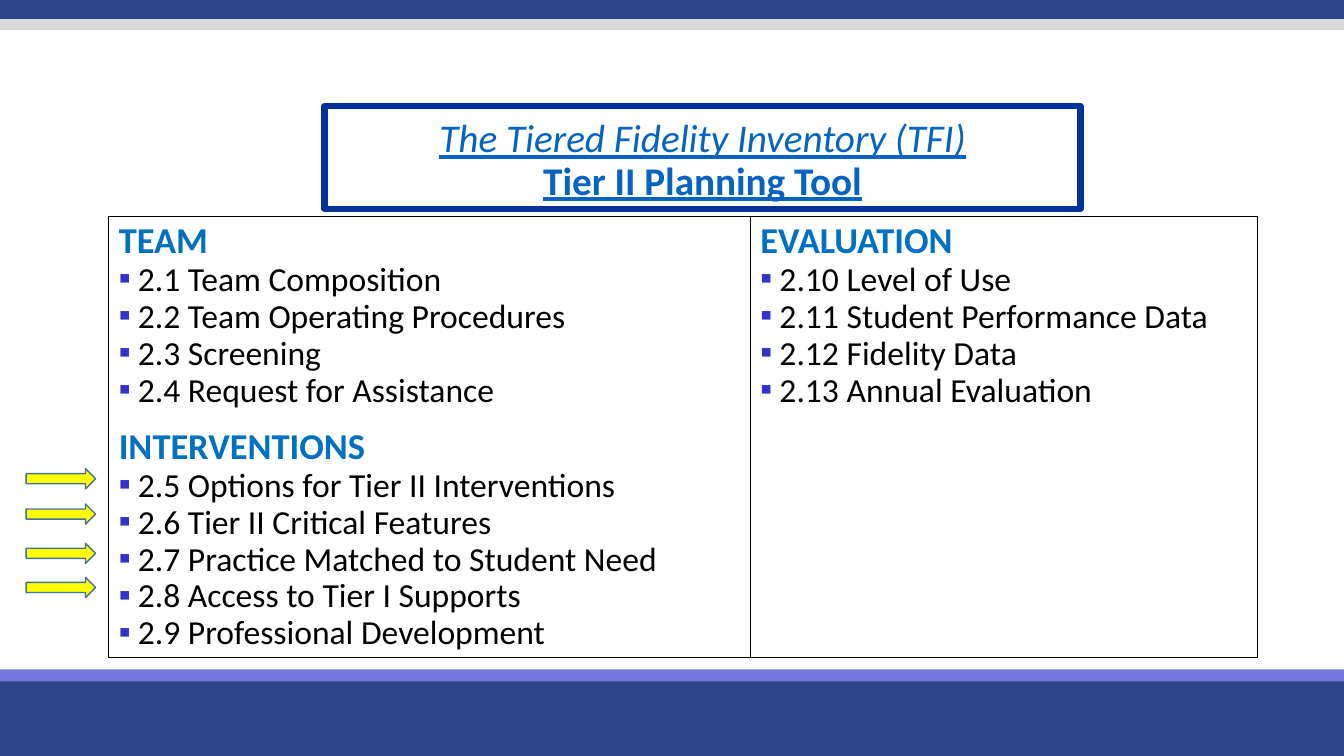
from dataclasses import dataclass

from lxml.etree import SubElement
from pptx import Presentation
from pptx.dml.color import RGBColor
from pptx.enum.shapes import MSO_SHAPE
from pptx.enum.text import MSO_ANCHOR, PP_ALIGN
from pptx.oxml.ns import qn
from pptx.util import Cm, Pt

COLORS = {
    "navy": "2E4488", "grey": "D9D9D9", "violet": "7476DA", "white": "FFFFFF",
    "black": "000000", "heading": "0070C0", "bullet": "3333CC",
    "yellow": "FFFF00", "arrow_line": "42719B", "frame": "003399", "link": "0563C1",
}
FORMATS = {
    "heading": {"size": Pt(26), "bold": True},
    "item": {"size": Pt(24), "bold": False},
    "title": {"size": Pt(28), "italic": True, "underline": True},
    "subtitle": {"size": Pt(28), "bold": True, "underline": True},
}
SLIDE_W, SLIDE_H = 33.87, 19.05
HANG = Cm(0.48)


@dataclass
class Box:
    left: float
    top: float
    width: float
    height: float
    fill: str
    line: str | None = None
    weight: float = 1
    kind: MSO_SHAPE = MSO_SHAPE.RECTANGLE


@dataclass
class Section:
    heading: str
    items: list[str]


BANDS = [
    Box(0, 0, SLIDE_W, 0.48, "navy"),
    Box(0, 0.48, SLIDE_W, 0.28, "grey"),
    Box(0, 17.02, SLIDE_W, 2.03, "navy"),
    Box(0, 16.87, SLIDE_W, 0.3, "violet"),
]
ARROWS = [
    Box(0.66, top, 1.75, 0.51, "yellow", "arrow_line", kind=MSO_SHAPE.RIGHT_ARROW)
    for top in (11.81, 12.7, 13.69, 14.55)
]
TITLE_BOX = Box(8.18, 2.67, 19.05, 2.59, "white", "frame", 4.5)
COLUMN_WIDTHS = [16.17, 12.78]
COLUMNS = [
    [
        Section("TEAM", [
            "2.1 Team Composition",
            "2.2 Team Operating Procedures",
            "2.3 Screening",
            "2.4 Request for Assistance",
        ]),
        Section("INTERVENTIONS", [
            "2.5 Options for Tier II Interventions",
            "2.6 Tier II Critical Features",
            "2.7 Practice Matched to Student Need",
            "2.8 Access to Tier I Supports",
            "2.9 Professional Development",
        ]),
    ],
    [
        Section("EVALUATION", [
            "2.10 Level of Use",
            "2.11 Student Performance Data",
            "2.12 Fidelity Data",
            "2.13 Annual Evaluation",
        ]),
    ],
]


def rgb(name: str) -> RGBColor:
    return RGBColor.from_string(COLORS[name])


def add_box(s, box: Box):
    sp = s.shapes.add_shape(box.kind, Cm(box.left), Cm(box.top), Cm(box.width), Cm(box.height))
    sp.shadow.inherit = False
    sp.fill.solid()
    sp.fill.fore_color.rgb = rgb(box.fill)
    if box.line:
        sp.line.color.rgb = rgb(box.line)
        sp.line.width = Pt(box.weight)
    else:
        sp.line.fill.background()
    return sp


def add_run(p, text: str, style: str, color: str) -> None:
    r = p.add_run()
    r.text = text
    r.font.name = "Calibri"
    r.font.color.rgb = rgb(color)
    for name, value in FORMATS[style].items():
        setattr(r.font, name, value)


def add_bullet(p) -> None:
    pPr = p._p.get_or_add_pPr()
    pPr.set("marL", str(HANG))
    pPr.set("indent", str(-HANG))
    clr = SubElement(pPr, qn("a:buClr"))
    SubElement(clr, qn("a:srgbClr"), val=COLORS["bullet"])
    SubElement(pPr, qn("a:buFont"), typeface="Calibri")
    SubElement(pPr, qn("a:buChar"), char="▪")


def fill_cell(cell, sections: list[Section]) -> None:
    # Borders come before the fill in the cell properties
    tcPr = cell._tc.get_or_add_tcPr()
    for side in ("lnL", "lnR", "lnT", "lnB"):
        ln = SubElement(tcPr, qn(f"a:{side}"), w=str(Pt(1)))
        SubElement(SubElement(ln, qn("a:solidFill")), qn("a:srgbClr"), val=COLORS["black"])
    cell.fill.solid()
    cell.fill.fore_color.rgb = rgb("white")

    tf = cell.text_frame
    for i, section in enumerate(sections):
        p = tf.add_paragraph() if i else tf.paragraphs[0]
        if i:
            p.space_before = Pt(13)
        p.line_spacing = 0.9
        add_run(p, section.heading, "heading", "heading")
        for item in section.items:
            p = tf.add_paragraph()
            add_bullet(p)
            p.line_spacing = 0.9
            add_run(p, item, "item", "black")


def add_inventory(s) -> None:
    table = s.shapes.add_table(
        1, len(COLUMNS), Cm(2.74), Cm(5.46), Cm(sum(COLUMN_WIDTHS)), Cm(10.82)).table
    table.first_row = table.horz_banding = False
    for i, (width, sections) in enumerate(zip(COLUMN_WIDTHS, COLUMNS)):
        table.columns[i].width = Cm(width)
        fill_cell(table.cell(0, i), sections)


def add_title(s) -> None:
    tf = add_box(s, TITLE_BOX).text_frame
    tf.word_wrap = True
    tf.vertical_anchor = MSO_ANCHOR.BOTTOM
    p = tf.paragraphs[0]
    p.alignment = PP_ALIGN.CENTER
    p.line_spacing = 0.9
    add_run(p, "The Tiered Fidelity Inventory (TFI)", "title", "link")
    p.add_line_break()
    add_run(p, "Tier II Planning Tool", "subtitle", "link")


def main() -> None:
    prs = Presentation()
    prs.slide_width, prs.slide_height = Cm(SLIDE_W), Cm(SLIDE_H)
    s = prs.slides.add_slide(prs.slide_layouts[6])

    # Header and footer bands
    for band in BANDS:
        add_box(s, band)
    # Inventory table with arrows at the highlighted items
    add_inventory(s)
    for arrow in ARROWS:
        add_box(s, arrow)
    # Framed title
    add_title(s)

    prs.save("out.pptx")


if __name__ == "__main__":
    main()
